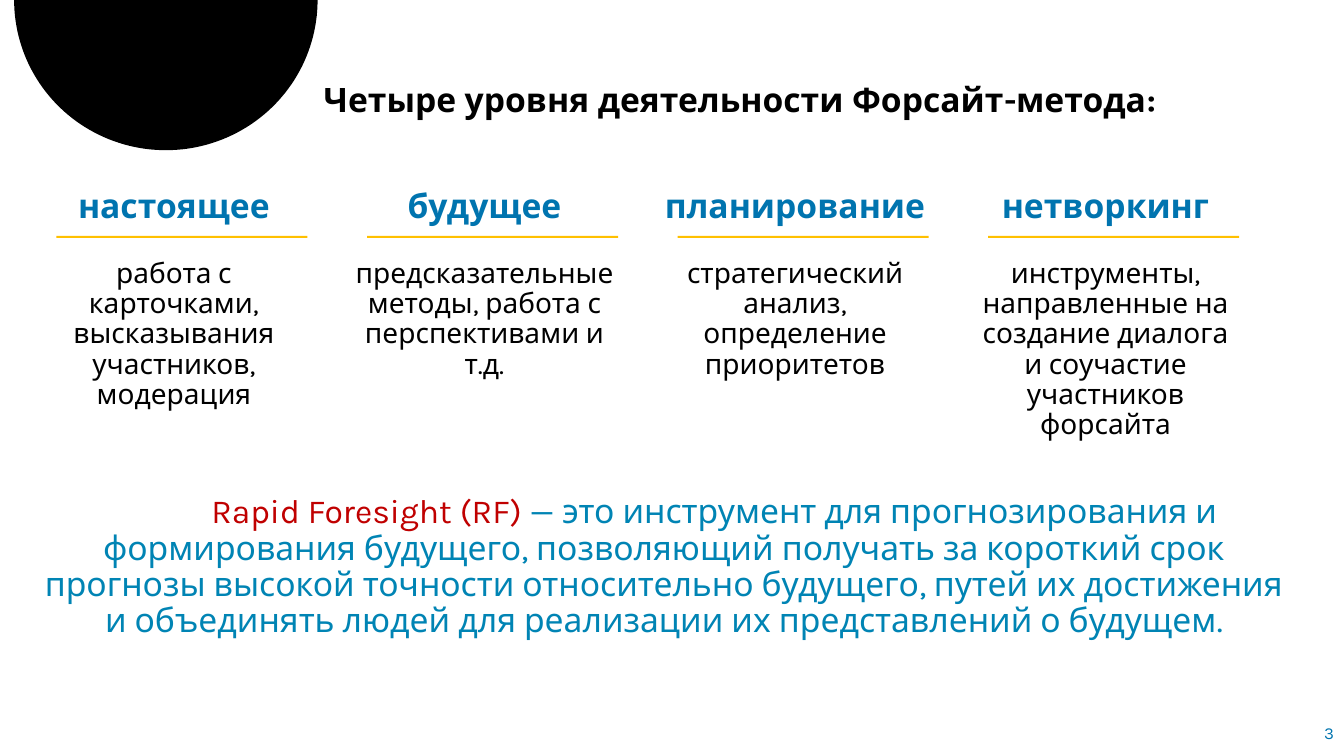
from math import cos, pi, sin

from pptx import Presentation
from pptx.dml.color import RGBColor
from pptx.enum.shapes import MSO_SHAPE
from pptx.enum.text import MSO_ANCHOR, MSO_AUTO_SIZE, PP_ALIGN
from pptx.util import Inches, Pt

FONT = "Karla"
COLORS = {
    "black": "000000",
    "blue": "0074AF",
    "teal": "0084B4",
    "red": "C00000",
    "gold": "FFC000",
}
LEVELS = [
    ("настоящее", "работа с карточками, высказывания участников, модерация"),
    ("будущее", "предсказательные методы, работа с перспективами и т.д."),
    ("планирование", "стратегический анализ, определение приоритетов"),
    ("нетворкинг", "инструменты, направленные на создание диалога и соучастие участников форсайта"),
]
FIRST_LEFT, COLUMN_STEP = 0.31, 3.08


def rgb(name):
    return RGBColor.from_string(COLORS[name])


def style_paragraph(para, size, color, bold=False, align=PP_ALIGN.CENTER, spacing=0.9):
    para.alignment = align
    para.line_spacing = spacing
    para.font.name = FONT
    para.font.size = Pt(size)
    para.font.bold = bold
    para.font.color.rgb = rgb(color)


def add_box(page, left, top, width, height, wrap=True):
    box = page.shapes.add_textbox(Inches(left), Inches(top), Inches(width), Inches(height))
    box.text_frame.word_wrap = wrap
    return box.text_frame


def fill_plain(shape, color):
    shape.shadow.inherit = False
    shape.fill.solid()
    shape.fill.fore_color.rgb = rgb(color)
    shape.line.fill.background()


def add_half_disc(page, center, radius_x, radius_y, steps=90):
    """Draw a half disc that hangs from the top edge of the slide."""
    points = [
        (Inches(center + radius_x * cos(pi * step / steps)),
         Inches(radius_y * sin(pi * step / steps)))
        for step in range(steps + 1)
    ]
    builder = page.shapes.build_freeform(*points[0])
    builder.add_line_segments(points[1:], close=True)
    fill_plain(builder.convert_to_shape(), "black")


def set_title(page, text):
    title = page.shapes.title
    title.left, title.top = Inches(3.11), Inches(0.78)
    title.width, title.height = Inches(9.93), Inches(0.46)
    frame = title.text_frame
    frame.text = text
    frame.word_wrap = True
    frame.auto_size = MSO_AUTO_SIZE.NONE
    frame.vertical_anchor = MSO_ANCHOR.TOP
    style_paragraph(frame.paragraphs[0], 24, "black", bold=True, align=PP_ALIGN.LEFT)


def add_level(page, left, heading, description):
    """Add one column: heading, gold rule and description."""
    frame = add_box(page, left, 1.83, 2.83, 2.62)
    head = frame.paragraphs[0]
    head.text = heading
    head.space_after = Pt(24)
    style_paragraph(head, 24, "blue", bold=True)
    body = frame.add_paragraph()
    body.text = description
    style_paragraph(body, 20, "black")

    rule = page.shapes.add_shape(
        MSO_SHAPE.RECTANGLE, Inches(left + 0.25), Inches(2.34), Inches(2.49), Inches(0.02))
    fill_plain(rule, "gold")


def add_definition(page, term, meaning):
    para = add_box(page, 0.22, 4.86, 12.73, 2.06).paragraphs[0]
    para._p.get_or_add_pPr().set("indent", str(Inches(1)))
    style_paragraph(para, 24, "teal")
    for text, color in ((term, "red"), (meaning, "teal")):
        span = para.add_run()
        span.text = text
        span.font.color.rgb = rgb(color)


def add_page_number(page, number):
    frame = add_box(page, 12.78, 7.07, 0.55, 0.4, wrap=False)
    frame.vertical_anchor = MSO_ANCHOR.MIDDLE
    para = frame.paragraphs[0]
    para.text = number
    style_paragraph(para, 12, "blue", align=PP_ALIGN.RIGHT, spacing=1.0)


def main():
    deck = Presentation()
    deck.slide_width, deck.slide_height = Inches(13.33), Inches(7.5)
    page = deck.slides.add_slide(deck.slide_layouts[5])

    add_half_disc(page, 1.645, 1.505, 1.49)
    set_title(page, "Четыре уровня деятельности Форсайт-метода:")
    for column, (heading, description) in enumerate(LEVELS):
        add_level(page, FIRST_LEFT + column * COLUMN_STEP, heading, description)
    add_definition(
        page,
        "Rapid Foresight (RF)",
        " — это инструмент для прогнозирования и формирования будущего, "
        "позволяющий получать за короткий срок прогнозы высокой точности "
        "относительно будущего, путей их достижения и объединять людей "
        "для реализации их представлений о будущем.",
    )
    add_page_number(page, "3")
    deck.save("out.pptx")


if __name__ == "__main__":
    main()
